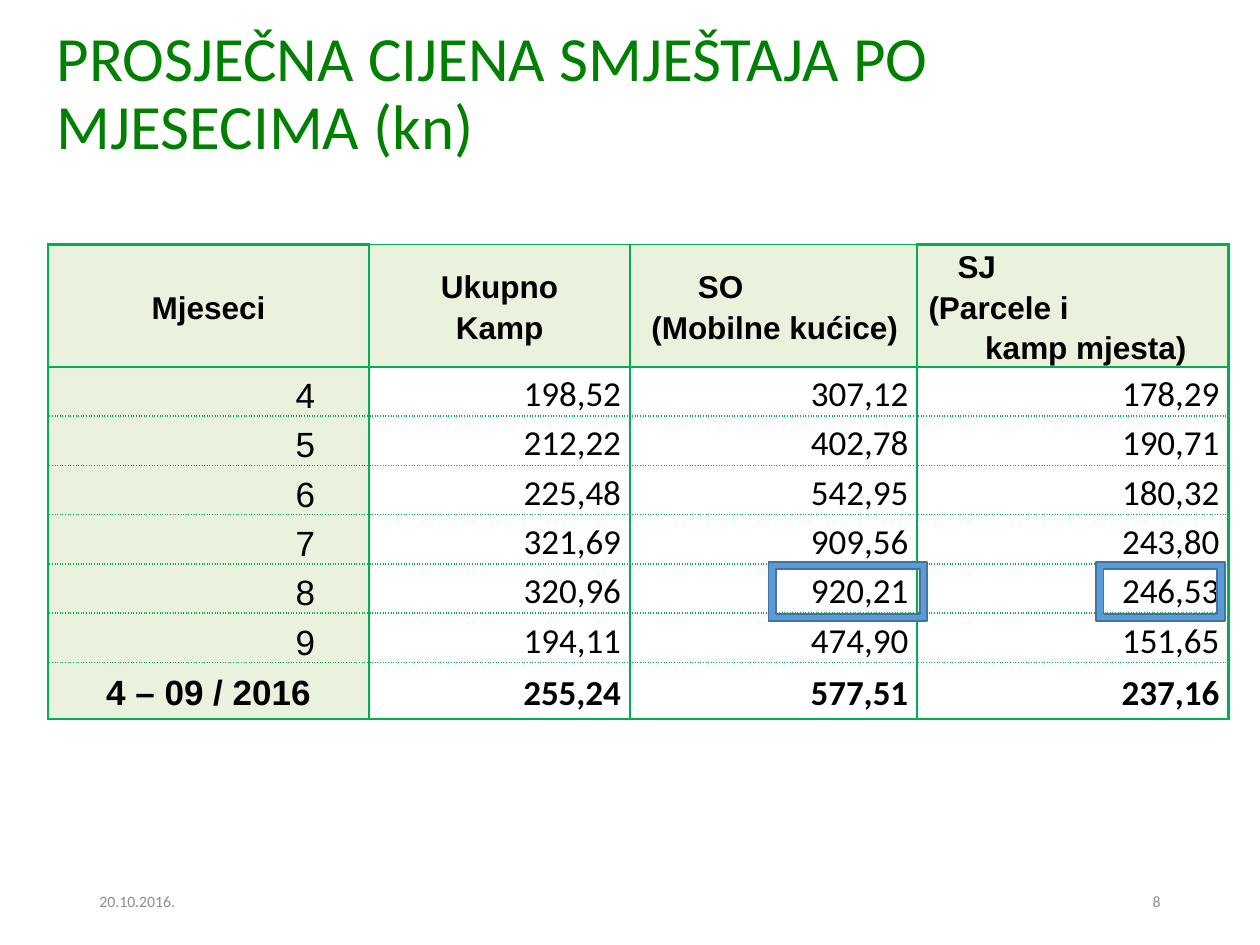
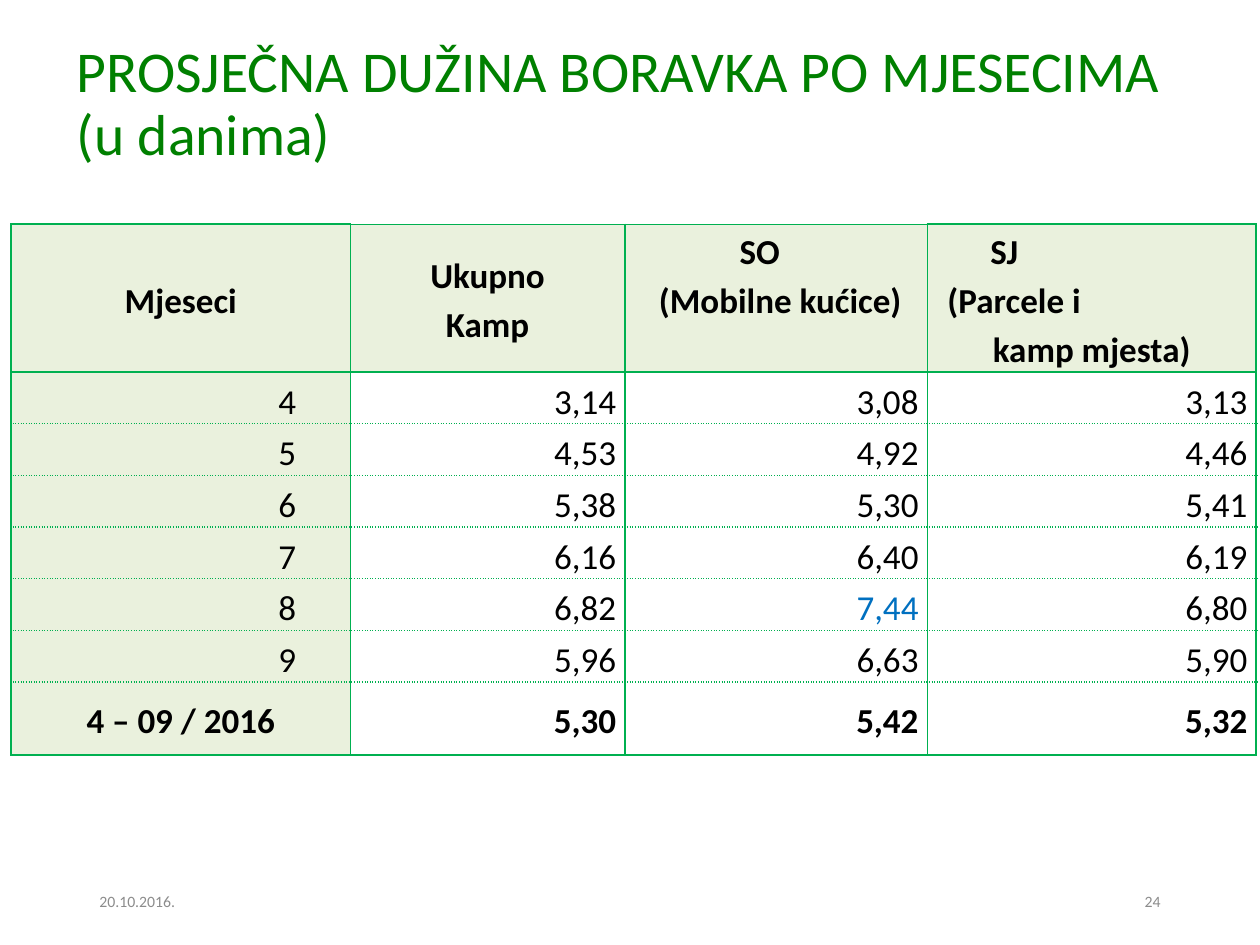
from lxml import etree
from pptx import Presentation
from pptx.dml.color import RGBColor
from pptx.enum.shapes import MSO_SHAPE as Shape
from pptx.enum.text import MSO_ANCHOR as Anchor, PP_ALIGN as Align, MSO_AUTO_SIZE as Fit
from pptx.oxml.ns import qn
from pptx.util import Inches, Pt

GREEN, LINE, PALE = "008000", "00B050", "EAF1DD"
BLACK, WHITE, GREY = "000000", "FFFFFF", "8C8C8C"
BLUE, EDGE, MARK = "5B9BD5", "43739E", "0070C0"
FONT = "Calibri"
MONTHS = ["4", "5", "6", "7", "8", "9"]
SPAN = "4 – 09 / 2016"


def color(code):
    return RGBColor.from_string(code)


def add_run(para, text, size, tint=BLACK, bold=False, face=FONT):
    run = para.add_run()
    run.text = text
    font = run.font
    font.size, font.bold, font.name = Pt(size), bold, face
    font.color.rgb = color(tint)


def add_title(slide, box, lines, size):
    title = slide.shapes.title
    title.left, title.top, title.width, title.height = map(Inches, box)
    frame = title.text_frame
    frame.word_wrap, frame.auto_size = True, Fit.NONE
    frame.vertical_anchor = Anchor.MIDDLE
    para = frame.paragraphs[0]
    para.alignment, para.line_spacing = Align.LEFT, 0.9
    for i, line in enumerate(lines):
        if i:
            para.add_line_break()
        add_run(para, line, size, GREEN)


def add_foot(slide, number):
    """Date on the left, page number on the right."""
    for left, text, side in ((0.69, "20.10.2016.", Align.LEFT),
                             (7.06, number, Align.RIGHT)):
        box = slide.shapes.add_textbox(*map(Inches, (left, 6.95, 2.25, 0.4)))
        frame = box.text_frame
        frame.word_wrap, frame.vertical_anchor = True, Anchor.MIDDLE
        para = frame.paragraphs[0]
        para.alignment = side
        add_run(para, text, 9, GREY)


def set_edge(cell, side, width, dash="solid"):
    line = etree.SubElement(cell._tc.get_or_add_tcPr(), qn("a:ln" + side),
                            w=str(Pt(width)))
    fill = etree.SubElement(line, qn("a:solidFill"))
    etree.SubElement(fill, qn("a:srgbClr"), val=LINE)
    etree.SubElement(line, qn("a:prstDash"), val=dash)


def style_cell(cell, row, col, last):
    """Solid outline and header rule, dotted lines between months."""
    set_edge(cell, "L", 1 if col else 1.5)
    set_edge(cell, "R", 1.5 if col == 3 else 1)
    if row == 0:
        set_edge(cell, "T", 1.5 if col in (0, 3) else 1)
    else:
        set_edge(cell, "T", *((1.5,) if row == 1 else (1, "sysDot")))
    set_edge(cell, "B", *((1.5,) if row in (0, last) else (1, "sysDot")))
    cell.fill.solid()
    cell.fill.fore_color.rgb = color(WHITE if row and col else PALE)
    cell.margin_left = cell.margin_right = Inches(0.07)
    cell.margin_top = cell.margin_bottom = 0
    middle = row in (0, last)
    cell.vertical_anchor = Anchor.MIDDLE if middle else Anchor.BOTTOM
    if col == 0 and not middle:
        cell.margin_right = Inches(0.43)


def fill_cell(cell, lines, side, *look):
    """Each line is a text, or a text with its left indent."""
    frame = cell.text_frame
    for i, line in enumerate(lines):
        para = frame.add_paragraph() if i else frame.paragraphs[0]
        para.alignment, para.line_spacing = side, 1.15
        if isinstance(line, tuple):
            line, indent = line
            para.alignment = Align.LEFT
            para._p.get_or_add_pPr().set("marL", str(Inches(indent)))
        add_run(para, line, *look)


def add_grid(slide, box, cols, rows, heads, data, size, face, marked=None):
    """Month table; size is for the header, face for header and months."""
    last = len(rows) - 1
    shape = slide.shapes.add_table(len(rows), len(cols), *map(Inches, box))
    table = shape.table
    table.first_row = table.horz_banding = False
    for part, width in zip(table.columns, cols):
        part.width = Inches(width)
    for part, height in zip(table.rows, rows):
        part.height = Inches(height)
    for row in range(len(rows)):
        for col in range(len(cols)):
            cell = table.cell(row, col)
            style_cell(cell, row, col, last)
            if row == 0:
                fill_cell(cell, heads[col], Align.CENTER, size, BLACK, True, face)
                continue
            text = data[row - 1][col]
            tint = MARK if (row, col) == marked else BLACK
            side = Align.CENTER if (row, col) == (last, 0) else Align.RIGHT
            fill_cell(cell, [text], side, 20, tint, row == last,
                      FONT if col else face)
    return table


def add_frame(slide, left, top, width, height):
    shape = slide.shapes.add_shape(Shape.FRAME,
                                   *map(Inches, (left, top, width, height)))
    shape.shadow.inherit = False
    shape.fill.solid()
    shape.fill.fore_color.rgb = color(BLUE)
    shape.line.color.rgb = color(EDGE)
    shape.line.width = Pt(1)


def join_data(*cols):
    return list(zip(MONTHS + [SPAN], *(col.split() for col in cols)))


def make_price(slide):
    add_title(slide, (0.35, 0.13, 9.21, 1.25),
              ["PROSJEČNA CIJENA SMJEŠTAJA PO MJESECIMA (kn)"], 36)
    heads = [["Mjeseci"], ["Ukupno", "Kamp"],
             [("SO", 0.47), ("(Mobilne kućice)", 0.1)],
             [("SJ", 0.25), ("(Parcele i", 0.02), ("kamp mjesta)", 0.47)]]
    data = join_data("198,52 212,22 225,48 321,69 320,96 194,11 255,24",
                     "307,12 402,78 542,95 909,56 920,21 474,90 577,51",
                     "178,29 190,71 180,32 243,80 246,53 151,65 237,16")
    add_grid(slide, (0.38, 1.94, 9.37, 3.76), (2.55, 2.07, 2.28, 2.47),
             [0.97] + [0.39] * 6 + [0.45], heads, data, 18, "Arial")
    add_foot(slide, "8")
    # Frames round the highest prices
    for left, width in ((6.1, 1.26), (8.7, 1.02)):
        add_frame(slide, left, 4.46, width, 0.47)


def make_stay(slide):
    add_title(slide, (0.51, 0.21, 9.21, 1.25),
              ["PROSJEČNA DUŽINA BORAVKA PO MJESECIMA", "(u danima)"], 33)
    heads = [["Mjeseci"], ["Ukupno", "Kamp"],
             [("SO", 0.84), ("(Mobilne kućice)", 0.2)],
             [("SJ", 0.43), ("(Parcele i", 0.09), ("kamp mjesta)", 0.45)]]
    data = join_data("3,14 4,53 5,38 6,16 6,82 5,96 5,30",
                     "3,08 4,92 5,30 6,40 7,44 6,63 5,42",
                     "3,13 4,46 5,41 6,19 6,80 5,90 5,32")
    table = add_grid(slide, (0.09, 1.78, 9.88, 4.21), (2.69, 2.18, 2.4, 2.61),
                     [1.17] + [0.41] * 6 + [0.58], heads, data, 20, FONT, (5, 2))
    table.cell(0, 2).vertical_anchor = Anchor.TOP
    add_foot(slide, "24")


def main():
    deck = Presentation()
    deck.slide_width, deck.slide_height = Inches(10), Inches(7.5)
    for make in (make_price, make_stay):
        make(deck.slides.add_slide(deck.slide_layouts[5]))
    deck.save("out.pptx")


if __name__ == "__main__":
    main()
